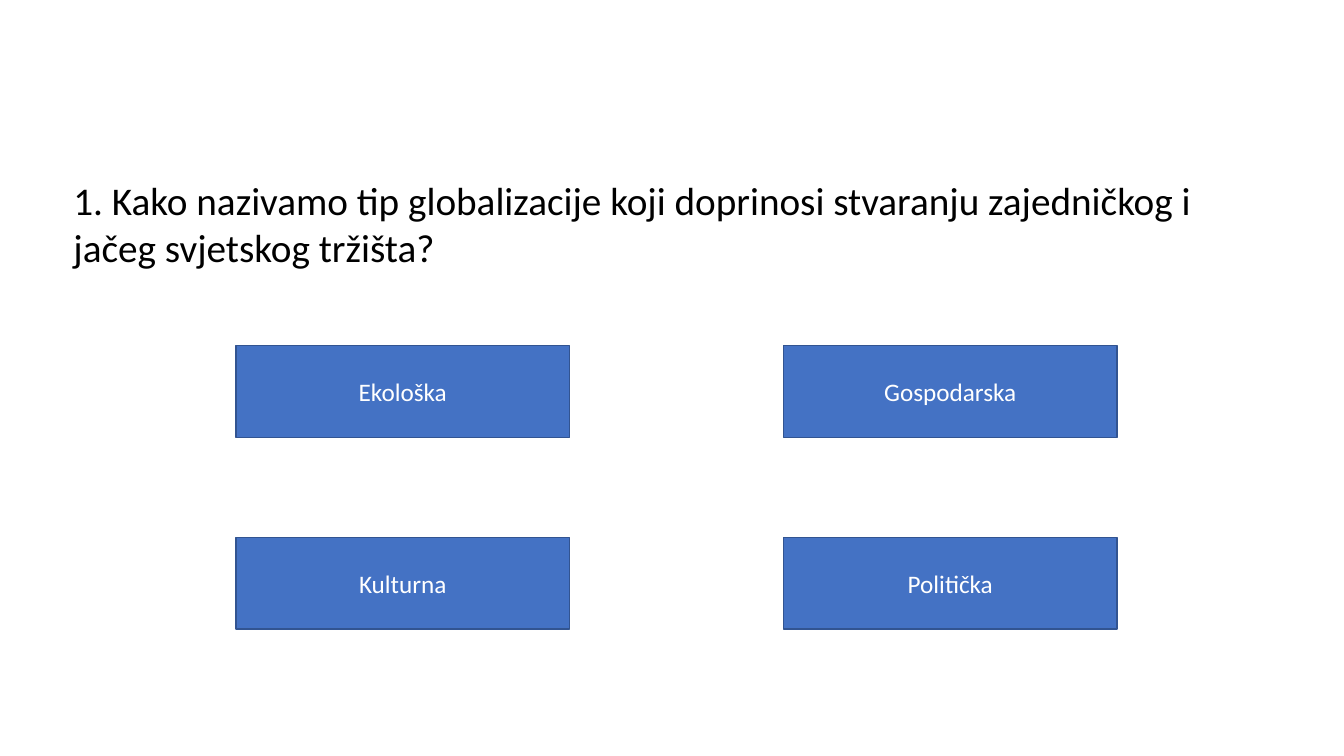
from dataclasses import dataclass

from pptx import Presentation
from pptx.dml.color import RGBColor
from pptx.enum.shapes import MSO_SHAPE
from pptx.enum.text import MSO_ANCHOR, MSO_AUTO_SIZE, PP_ALIGN
from pptx.util import Inches, Pt

RECTANGLE = MSO_SHAPE.RECTANGLE
MIDDLE = MSO_ANCHOR.MIDDLE
CENTER = PP_ALIGN.CENTER
GROW = MSO_AUTO_SIZE.SHAPE_TO_FIT_TEXT

# Content
QUESTION = ("1. Kako nazivamo tip globalizacije koji doprinosi stvaranju "
            "zajedničkog i jačeg svjetskog tržišta?")
ANSWERS = [
    ("Ekološka", "Gospodarska"),
    ("Kulturna", "Politička"),
]


@dataclass(frozen=True)
class Theme:
    font: str = "Calibri"
    question_size: int = 28
    answer_size: int = 18
    question_color: str = "000000"
    answer_color: str = "FFFFFF"
    fill: str = "4472C4"
    line: str = "325491"


THEME = Theme()

# Answer grid, in inches
GRID_LEFT, GRID_TOP = 2.34, 3.43
ANSWER_WIDTH, ANSWER_HEIGHT = 3.31, 0.91
COLUMN_STEP, ROW_STEP = 5.43, 1.9


def write(box, text, size, color):
    box.text_frame.word_wrap = True
    para = box.text_frame.paragraphs[0]
    para.text = text
    font = para.runs[0].font
    font.name = THEME.font
    font.size = Pt(size)
    font.color.rgb = RGBColor.from_string(color)
    return para


def add_answer(page, text, left, top):
    box = page.shapes.add_shape(RECTANGLE, Inches(left), Inches(top),
                                Inches(ANSWER_WIDTH), Inches(ANSWER_HEIGHT))
    box.shadow.inherit = False
    box.fill.solid()
    box.fill.fore_color.rgb = RGBColor.from_string(THEME.fill)
    box.line.color.rgb = RGBColor.from_string(THEME.line)
    box.line.width = Pt(1)
    box.text_frame.vertical_anchor = MIDDLE
    para = write(box, text, THEME.answer_size, THEME.answer_color)
    para.alignment = CENTER


def main():
    deck = Presentation()
    deck.slide_width, deck.slide_height = Inches(13.33), Inches(7.5)
    page = deck.slides.add_slide(deck.slide_layouts[6])

    # Answers
    for row, answers in enumerate(ANSWERS):
        for column, answer in enumerate(answers):
            add_answer(page, answer, GRID_LEFT + column * COLUMN_STEP,
                       GRID_TOP + row * ROW_STEP)

    # Question
    question = page.shapes.add_textbox(Inches(0.63), Inches(1.7),
                                       Inches(11.81), Inches(1.04))
    write(question, QUESTION, THEME.question_size, THEME.question_color)
    question.text_frame.auto_size = GROW

    deck.save("out.pptx")


if __name__ == "__main__":
    main()
